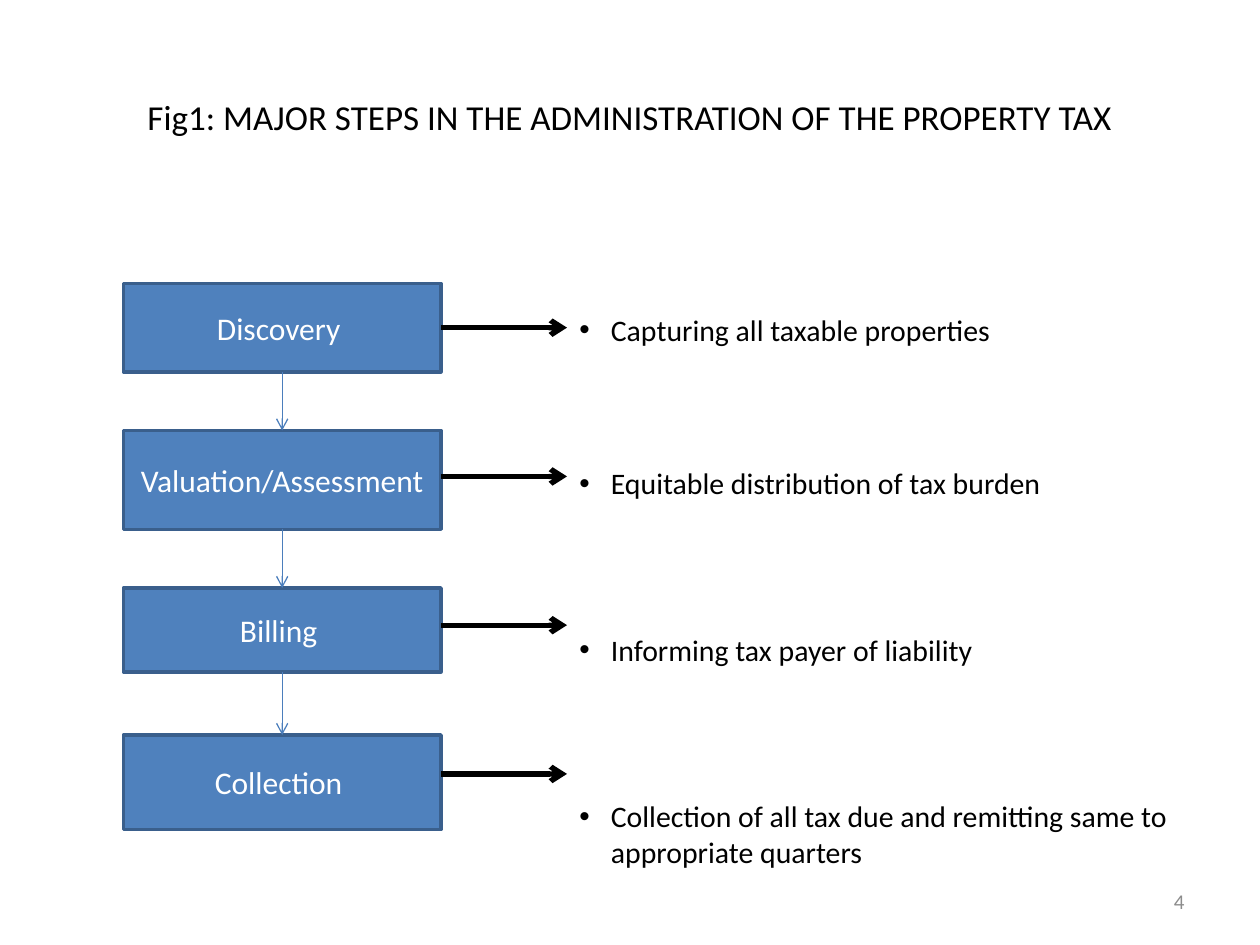
"""Build the slide on the major steps of property tax administration."""
import lxml.etree
import pptx
import pptx.dml.color
import pptx.enum.shapes
import pptx.enum.text
import pptx.oxml.ns
import pptx.util

Pt = pptx.util.Pt
qn = pptx.oxml.ns.qn
ALIGN = pptx.enum.text.PP_ALIGN
HUES = {
    name: pptx.dml.color.RGBColor.from_string(code)
    for name, code in {
        "black": "000000", "white": "FFFFFF", "grey": "8C8C8C",
        "fill": "4F81BD", "edge": "3A5F8C", "flow": "4B7EBC",
    }.items()
}


def write(shape, lines, size, hue, align, anchor="MIDDLE"):
    frame = shape.text_frame
    frame.word_wrap = True
    frame.vertical_anchor = pptx.enum.text.MSO_ANCHOR[anchor]
    frame.text = "\n".join(lines)
    for para in frame.paragraphs:
        para.alignment = align
        for run in para.runs:
            run.font.name = "Calibri"
            run.font.size = Pt(size)
            run.font.color.rgb = HUES[hue]


def arrow(start, end, hue, width):
    line = slide.shapes.add_connector(
        pptx.enum.shapes.MSO_CONNECTOR.STRAIGHT,
        *[Pt(n) for n in (*start, *end)])
    line.line.color.rgb = HUES[hue]
    line.line.width = Pt(width)
    props = line._element.spPr
    lxml.etree.SubElement(props.find(qn("a:ln")), qn("a:tailEnd"), type="arrow")
    lxml.etree.SubElement(props, qn("a:effectLst"))
    return line


deck = pptx.Presentation()
deck.slide_width, deck.slide_height = Pt(720), Pt(540)
slide = deck.slides.add_slide(deck.slide_layouts[6])

title = slide.shapes.add_textbox(Pt(36), Pt(21.6), Pt(648), Pt(90))
write(title, ["Fig1: MAJOR STEPS IN THE ADMINISTRATION OF THE PROPERTY TAX"],
      20, "black", ALIGN.CENTER)

notes = [
    "Capturing all taxable properties",
    "Equitable distribution of tax burden",
    "Informing tax payer of liability",
    "Collection of all tax due and remitting same to appropriate quarters",
]
body = slide.shapes.add_textbox(Pt(324), Pt(174.5), Pt(360), Pt(324))
write(body, notes, 17, "black", ALIGN.LEFT, "TOP")
for para, gap in zip(body.text_frame.paragraphs, (0, 67.3, 74.7, 74.7)):
    para.space_before = Pt(gap)
    props = para._p.get_or_add_pPr()
    props.set("marL", str(Pt(18)))
    props.set("indent", str(-Pt(18)))
    lxml.etree.SubElement(props, qn("a:buFont"), typeface="Arial")
    lxml.etree.SubElement(props, qn("a:buChar"), char="•")

left, wide = 70.5, 181.5
right, mid = left + wide, left + wide / 2
steps = [
    ("Discovery ", 162, 50.5),
    ("Valuation/Assessment", 246, 56.5),
    ("Billing ", 336, 48),
    ("Collection ", 420, 54),
]
boxes = []
for label, top, high in steps:
    box = slide.shapes.add_shape(
        pptx.enum.shapes.MSO_SHAPE.RECTANGLE,
        Pt(left), Pt(top), Pt(wide), Pt(high))
    box.shadow.inherit = False
    box.fill.solid()
    box.fill.fore_color.rgb = HUES["fill"]
    box.line.color.rgb = HUES["edge"]
    box.line.width = Pt(2)
    write(box, [label], 18, "white", ALIGN.CENTER)
    boxes.append(box)

for upper, lower in zip(boxes, boxes[1:]):
    flow = arrow((mid, upper.top.pt), (mid, lower.top.pt), "flow", 0.75)
    flow.begin_connect(upper, 2)
    flow.end_connect(lower, 0)

for row in range(len(steps)):
    level = 187.25 + 85 * row
    link = arrow((right, level), (right + 72, level), "black", 3)
    if row == 0:
        link.begin_connect(boxes[row], 3)

number = slide.shapes.add_textbox(Pt(516), Pt(500.5), Pt(168), Pt(28.8))
write(number, ["4"], 12, "grey", ALIGN.RIGHT)

deck.save("out.pptx")
